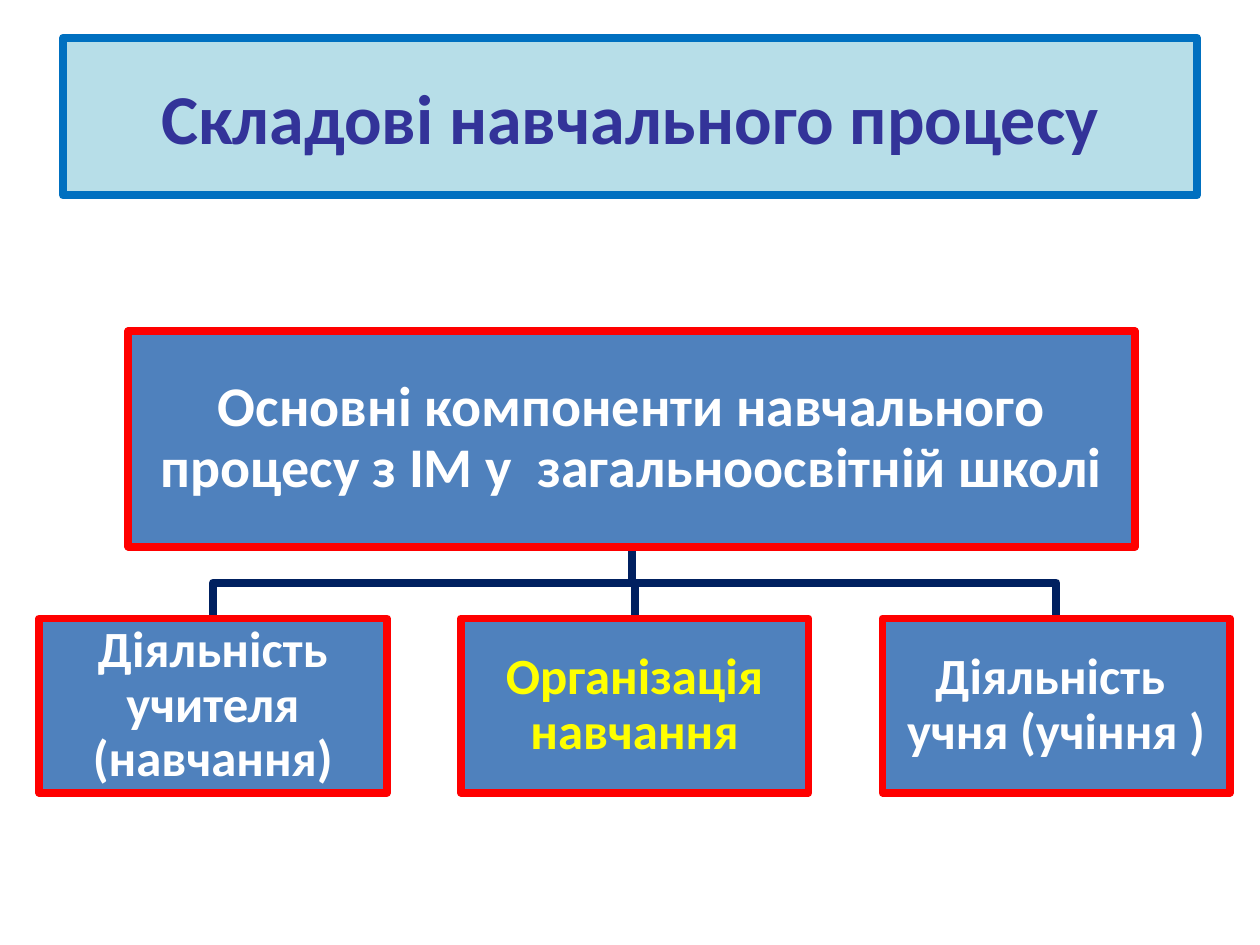
from pptx import Presentation
from pptx import util as u
from pptx.dml.color import RGBColor
from pptx.enum import shapes, text

PALE = RGBColor(0xB7, 0xDE, 0xE8)
AZURE = RGBColor(0x00, 0x70, 0xC0)
INDIGO = RGBColor(0x33, 0x33, 0x99)
NAVY = RGBColor(0x00, 0x20, 0x60)
BLUE = RGBColor(0x4F, 0x81, 0xBD)
RED = RGBColor(0xFF, 0x00, 0x00)
WHITE = RGBColor(0xFF, 0xFF, 0xFF)
YELLOW = RGBColor(0xFF, 0xFF, 0x00)


def write(tf, words, size, color, spacing=1.0, inset=None):
    tf.word_wrap = True
    tf.auto_size = text.MSO_AUTO_SIZE.NONE
    tf.vertical_anchor = text.MSO_ANCHOR.MIDDLE
    if inset is not None:
        tf.margin_left = tf.margin_right = u.Cm(inset)
        tf.margin_top = tf.margin_bottom = u.Cm(inset)
    p = tf.paragraphs[0]
    p.alignment = text.PP_ALIGN.CENTER
    p.line_spacing = spacing
    r = p.add_run()
    r.text = words
    r.font.name = "Calibri"
    r.font.size = u.Pt(size)
    r.font.bold = True
    r.font.color.rgb = color


class Chart:
    """Draws a title and a hierarchy of boxes on one slide."""

    def __init__(self, s, line_width=4.5):
        self.s = s
        self.line_width = u.Pt(line_width)

    def outline(self, sp, color):
        sp.line.color.rgb = color
        sp.line.width = self.line_width

    def paint(self, sp, fill, line):
        sp.fill.solid()
        sp.fill.fore_color.rgb = fill
        self.outline(sp, line)

    def title(self, words, left, top, width, height):
        sp = self.s.shapes.title
        sp.left, sp.top = u.Cm(left), u.Cm(top)
        sp.width, sp.height = u.Cm(width), u.Cm(height)
        self.paint(sp, PALE, AZURE)
        write(sp.text_frame, words, size=40, color=INDIGO)

    def box(self, words, left, top, width, height, size, color=WHITE):
        sp = self.s.shapes.add_shape(
            shapes.MSO_SHAPE.RECTANGLE,
            u.Cm(left), u.Cm(top), u.Cm(width), u.Cm(height))
        sp.shadow.inherit = False
        self.paint(sp, BLUE, RED)
        write(sp.text_frame, words, size=size, color=color,
              spacing=0.9, inset=0.05)

    def branch(self, x1, y1, x2, y2):
        mid = (y1 + y2) / 2
        points = [(u.Cm(x), u.Cm(y)) for x, y in
                  ((x1, y1), (x1, mid), (x2, mid), (x2, y2))]
        builder = self.s.shapes.build_freeform(*points[0])
        builder.add_line_segments(points[1:], close=False)
        sp = builder.convert_to_shape()
        sp.shadow.inherit = False
        sp.fill.background()
        self.outline(sp, NAVY)


def main():
    prs = Presentation()
    prs.slide_width, prs.slide_height = u.Cm(25.4), u.Cm(19.05)
    chart = Chart(prs.slides.add_slide(prs.slide_layouts[5]))
    chart.title("Складові навчального процесу", 1.27, 0.76, 22.86, 3.18)

    root_left, root_top, root_width, root_height = 2.59, 6.68, 20.29, 4.34
    left, top, width, height, step = 0.79, 12.47, 7.01, 3.51, 8.5
    parts = [
        ("Діяльність учителя (навчання)", WHITE),
        ("Організація навчання", YELLOW),
        ("Діяльність  учня (учіння )", WHITE),
    ]
    for i in range(len(parts)):
        chart.branch(root_left + root_width / 2, root_top + root_height,
                     left + i * step + width / 2, top)
    chart.box("Основні компоненти навчального процесу з ІМ у  "
              "загальноосвітній школі",
              root_left, root_top, root_width, root_height, size=32)
    for i, (words, color) in enumerate(parts):
        chart.box(words, left + i * step, top, width, height,
                  size=29, color=color)
    prs.save("out.pptx")


if __name__ == "__main__":
    main()
